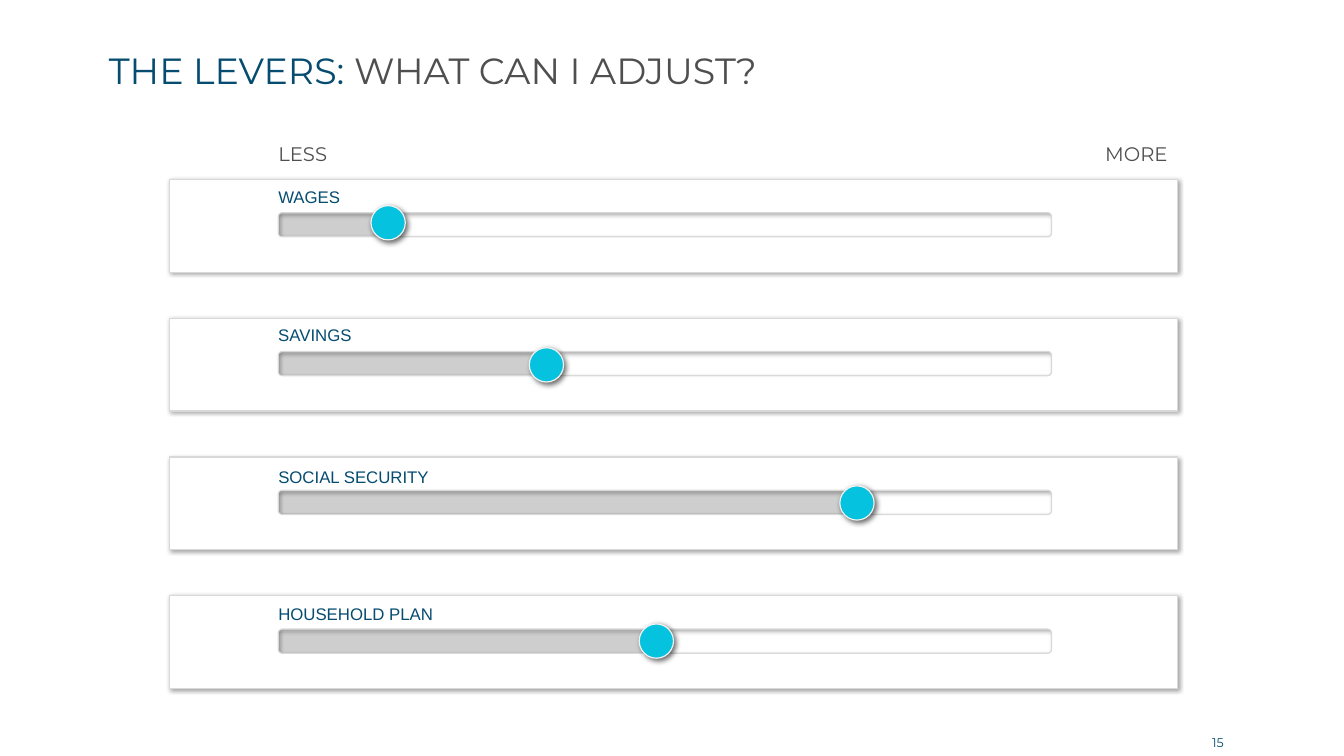
from math import cos, radians, sin

from lxml.etree import SubElement
from pptx import Presentation
from pptx.dml.color import RGBColor
from pptx.enum.shapes import MSO_SHAPE
from pptx.enum.text import MSO_ANCHOR, MSO_AUTO_SIZE, PP_ALIGN
from pptx.oxml.ns import qn
from pptx.util import Inches, Pt

NAVY, GRAY = "054C70", "4F4F4F"
PANEL_LEFT, PANEL_TOP, PANEL_WIDTH, PANEL_HEIGHT = 1.68, 1.78, 10, 0.92
PANEL_PITCH = 1.377
TRACK_LEFT, TRACK_RIGHT, TRACK_OFFSET, TRACK_HEIGHT = 2.76, 10.43, 0.33, 0.24
TRACK_RADIUS = 0.04
BAR_LEFT, BAR_OFFSET, BAR_HEIGHT = 1.9, 0.36, 0.2
KNOB_SIZE = 0.34

# name, label top, label width, knob left, knob top
LEVERS = [
    ("WAGES", 1.85, 0.62, 3.68, 2.04),
    ("SAVINGS", 3.22, 0.74, 5.25, 3.45),
    ("SOCIAL SECURITY", 4.63, 1.51, 8.33, 4.82),
    ("HOUSEHOLD PLAN", 5.99, 1.55, 6.34, 6.19),
]


def color(value):
    return RGBColor.from_string(value)


def add_text(slide, box, runs, size, font="Montserrat", wrap=True, grow=False,
             paragraph_format=None):
    """Add a one-paragraph text box; runs is a list of (text, colour)."""
    shape = slide.shapes.add_textbox(*map(Inches, box))
    frame = shape.text_frame
    frame_format = {
        "margin_left": 0, "margin_top": 0, "margin_right": 0, "margin_bottom": 0,
        "word_wrap": wrap,
        "auto_size": MSO_AUTO_SIZE.SHAPE_TO_FIT_TEXT if grow else MSO_AUTO_SIZE.NONE,
        "vertical_anchor": MSO_ANCHOR.TOP if grow else MSO_ANCHOR.MIDDLE,
    }
    for name, value in frame_format.items():
        setattr(frame, name, value)
    paragraph = frame.paragraphs[0]
    for name, value in (paragraph_format or {}).items():
        setattr(paragraph, name, value)
    for text, run_color in runs:
        run = paragraph.add_run()
        run.text = text
        run.font.name = font
        run.font.size = Pt(size)
        run.font.color.rgb = color(run_color)


def style_shape(shape, fill, line, shadow):
    """Set fill, line and a black shadow of (opacity %, blur pt, distance pt, degrees)."""
    shape.fill.solid()
    shape.fill.fore_color.rgb = color(fill)
    if line:
        shape.line.color.rgb = color(line)
        shape.line.width = Pt(0.85)
    else:
        shape.line.fill.background()
    shape.shadow.inherit = False
    opacity, blur, distance, angle = shadow
    effects = shape._element.spPr.find(qn("a:effectLst"))
    outer = SubElement(effects, qn("a:outerShdw"), blurRad=str(Pt(blur)),
                       dist=str(Pt(distance)), dir=str(angle * 60000),
                       algn="ctr", rotWithShape="0")
    shadow_color = SubElement(outer, qn("a:srgbClr"), val="000000")
    SubElement(shadow_color, qn("a:alpha"), val=str(opacity * 1000))


def track_outline(top):
    """Return the points of the rounded track, counterclockwise from its top right."""
    left, right = TRACK_LEFT + TRACK_RADIUS, TRACK_RIGHT - TRACK_RADIUS
    upper, lower = top + TRACK_RADIUS, top + TRACK_HEIGHT - TRACK_RADIUS
    corners = [(left, upper, 90), (left, lower, 180),
               (right, lower, 270), (right, upper, 0)]
    return [(Inches(x + TRACK_RADIUS * cos(radians(start + step))),
             Inches(y - TRACK_RADIUS * sin(radians(start + step))))
            for x, y, start in corners for step in range(0, 91, 15)]


def add_panel(slide, top):
    """Add a panel whose track is cut out, so that the bar behind shows."""
    left, right = Inches(PANEL_LEFT), Inches(PANEL_LEFT + PANEL_WIDTH)
    upper, lower = Inches(top), Inches(top + PANEL_HEIGHT)
    builder = slide.shapes.build_freeform(left, upper)
    builder.add_line_segments([(right, upper), (right, lower), (left, lower)])
    track = track_outline(top + TRACK_OFFSET)
    builder.move_to(*track[0])
    builder.add_line_segments(track[1:])
    style_shape(builder.convert_to_shape(), "FFFFFF", "D9D9D9", (34, 3, 1, 45))


def add_preset(slide, preset, box, fill, line, shadow):
    shape = slide.shapes.add_shape(preset, *map(Inches, box))
    style_shape(shape, fill, line, shadow)


def add_lever(slide, top, name, label_top, label_width, knob_left, knob_top):
    bar_width = knob_left + KNOB_SIZE / 2 - BAR_LEFT
    add_preset(slide, MSO_SHAPE.RECTANGLE,
               (BAR_LEFT, top + BAR_OFFSET, bar_width, BAR_HEIGHT),
               "CECECE", None, (40, 5, 0, 0))
    add_panel(slide, top)
    add_preset(slide, MSO_SHAPE.OVAL, (knob_left, knob_top, KNOB_SIZE, KNOB_SIZE),
               "05C3DE", "F2F2F2", (58, 4, 2, 45))
    add_text(slide, (TRACK_LEFT, label_top, label_width, 0.2), [(name, NAVY)], 12,
             font="Arial", wrap=False, grow=True)


def main():
    presentation = Presentation()
    presentation.slide_width = Inches(13.33)
    presentation.slide_height = Inches(7.5)
    slide = presentation.slides.add_slide(presentation.slide_layouts[6])

    add_text(slide, (11.91, 7.24, 0.34, 0.25), [("15", NAVY)], 9,
             paragraph_format={"alignment": PP_ALIGN.CENTER})
    add_text(slide, (1.08, 0.32, 11.17, 0.81),
             [("THE LEVERS: ", NAVY), ("WHAT CAN I ADJUST?", GRAY)], 26,
             paragraph_format={"line_spacing": 0.85})
    for left, caption in ((TRACK_LEFT, "LESS"), (10.96, "MORE")):
        add_text(slide, (left, 1.41, 0.98, 0.24), [(caption, GRAY)], 14, grow=True)
    for row, lever in enumerate(LEVERS):
        add_lever(slide, PANEL_TOP + row * PANEL_PITCH, *lever)

    presentation.save("out.pptx")


if __name__ == "__main__":
    main()
